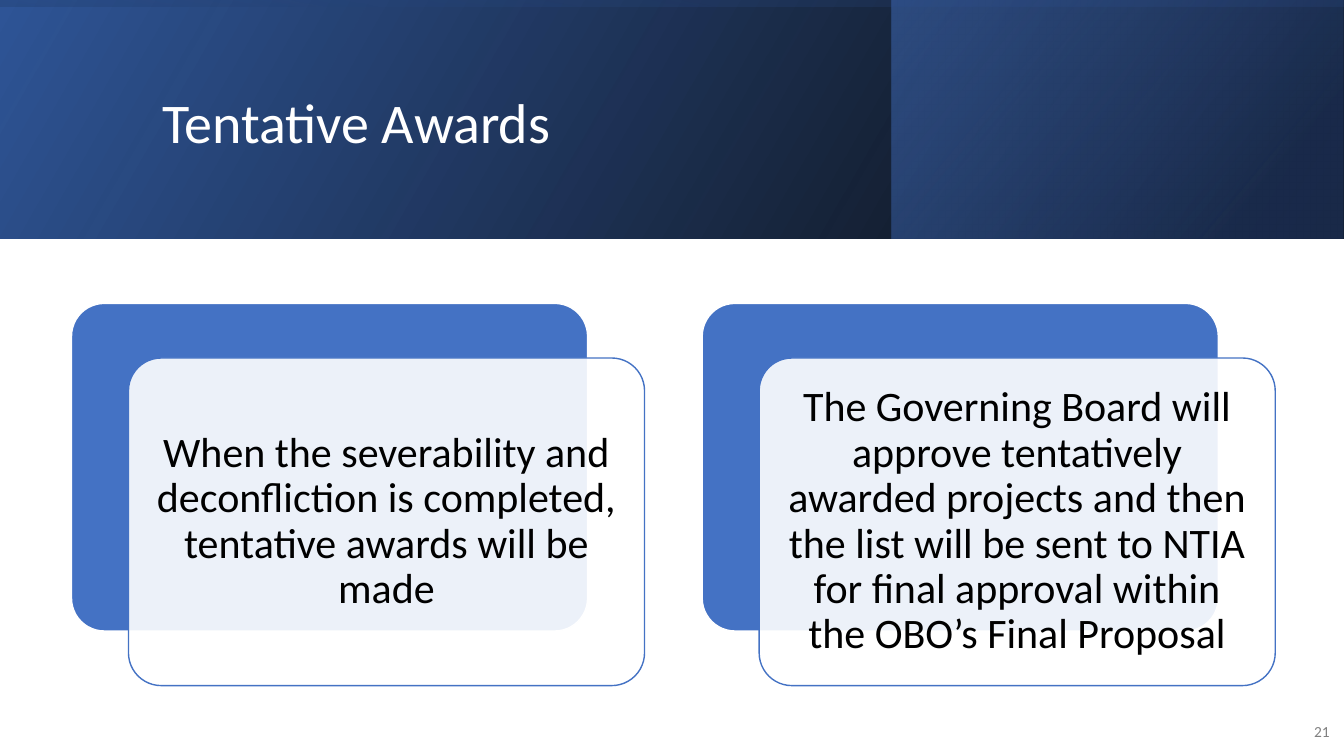
from pptx import Presentation, util as u
from pptx.dml.color import RGBColor
from pptx.enum import shapes, text
from pptx.oxml import parse_xml
from pptx.oxml.ns import nsdecls, qn

COLS, ROWS = 160, 90
BAND = 28.44
BLUE, WHITE, BLACK, GREY = "4472C4", "FFFFFF", "000000", "808080"
CARDS = (
    "When the severability and deconfliction is completed, "
    "tentative awards will be made",
    "The Governing Board will approve tentatively awarded projects and then "
    "the list will be sent to NTIA for final approval within "
    "the OBO’s Final Proposal",
)


def color(code):
    return RGBColor.from_string(code)


class Deck:
    """Style and current slide; lengths are columns and rows of the grid."""

    font = "Calibri"

    def __init__(self):
        self.prs = Presentation()
        self.prs.slide_width = u.Inches(13.333)
        self.prs.slide_height = u.Inches(7.5)
        self.slide = self.prs.slides.add_slide(self.prs.slide_layouts[6])

    def frame(self, x, y, w, h):
        col = self.prs.slide_width / COLS
        row = self.prs.slide_height / ROWS
        return round(x * col), round(y * row), round(w * col), round(h * row)

    def shape(self, kind, box):
        item = self.slide.shapes.add_shape(kind, *self.frame(*box))
        item.shadow.inherit = False
        return item

    def fade(self, box, angle, stops, turn=0):
        """Add a mirrored rectangle with stops of (place, colour, opacity)."""
        item = self.shape(shapes.MSO_SHAPE.RECTANGLE, box)
        item.line.fill.background()
        item.rotation = turn
        props = item.element.spPr
        props.find(qn("a:xfrm")).set("flipH", "1")
        marks = "".join(
            f'<a:gs pos="{place * 1000}"><a:srgbClr val="{code}">'
            f'<a:alpha val="{alpha * 1000}"/></a:srgbClr></a:gs>'
            for place, code, alpha in stops)
        props.find(qn("a:prstGeom")).addnext(parse_xml(
            f'<a:gradFill {nsdecls("a")} rotWithShape="1">'
            f'<a:gsLst>{marks}</a:gsLst>'
            f'<a:lin ang="{angle * 60000}" scaled="0"/></a:gradFill>'))

    def panel(self, box, fill, line, alpha=100):
        item = self.shape(shapes.MSO_SHAPE.ROUNDED_RECTANGLE, box)
        item.adjustments[0] = 0.1
        item.fill.solid()
        item.fill.fore_color.rgb = color(fill)
        item.line.color.rgb = color(line)
        item.line.width = u.Pt(1)
        if alpha < 100:
            tint = item.element.spPr.find(qn("a:solidFill"))[0]
            tint.append(parse_xml(
                f'<a:alpha {nsdecls("a")} val="{alpha * 1000}"/>'))
        return item

    def letter(self, item, words, size, ink, align, gap=1.0):
        """Put styled words into a shape."""
        body = item.text_frame
        body.text = words
        body.word_wrap = True
        body.vertical_anchor = text.MSO_ANCHOR.MIDDLE
        para = body.paragraphs[0]
        para.alignment = align
        para.line_spacing = gap
        face = para.runs[0].font
        face.name, face.size = self.font, u.Pt(size)
        face.color.rgb = color(ink)

    def label(self, box, *style):
        self.letter(self.slide.shapes.add_textbox(*self.frame(*box)), *style)

    def card(self, x, words):
        """Add a blue panel with a translucent text panel shifted over it."""
        y, w, h = 36.12, 61.44, 39
        self.panel((x, y, w, h), BLUE, WHITE)
        front = self.panel((x + 6.78, y + 6.5, w, h), WHITE, BLUE, 90)
        body = front.text_frame
        body.margin_left = body.margin_right = u.Inches(0.12)
        body.margin_top = body.margin_bottom = u.Inches(0.12)
        self.letter(front, words, 30, BLACK, text.PP_ALIGN.CENTER, 0.9)


def main():
    deck = Deck()
    deck.fade((0, 0, COLS, BAND), 330,
              [(0, BLACK, 96), (100, "2F5597", 100)])
    deck.fade((106.1, 0, 53.8, BAND), 320,
              [(19, "203864", 68), (100, BLUE, 48)])
    mid = (COLS - BAND) / 2
    deck.fade((mid, -mid, BAND, COLS), 350,
              [(23, "2F5597", 16), (99, BLACK, 45)], turn=270)
    deck.label((18.12, 4.56, 127.56, 20.64), "Tentative Awards", 40, WHITE,
               text.PP_ALIGN.LEFT, 0.9)
    deck.label((153.6, 84.72, 5.88, 4.8), "21", 11, GREY,
               text.PP_ALIGN.RIGHT)
    for n, words in enumerate(CARDS):
        deck.card(8.52 + n * 75.08, words)
    deck.prs.save("out.pptx")


if __name__ == "__main__":
    main()
